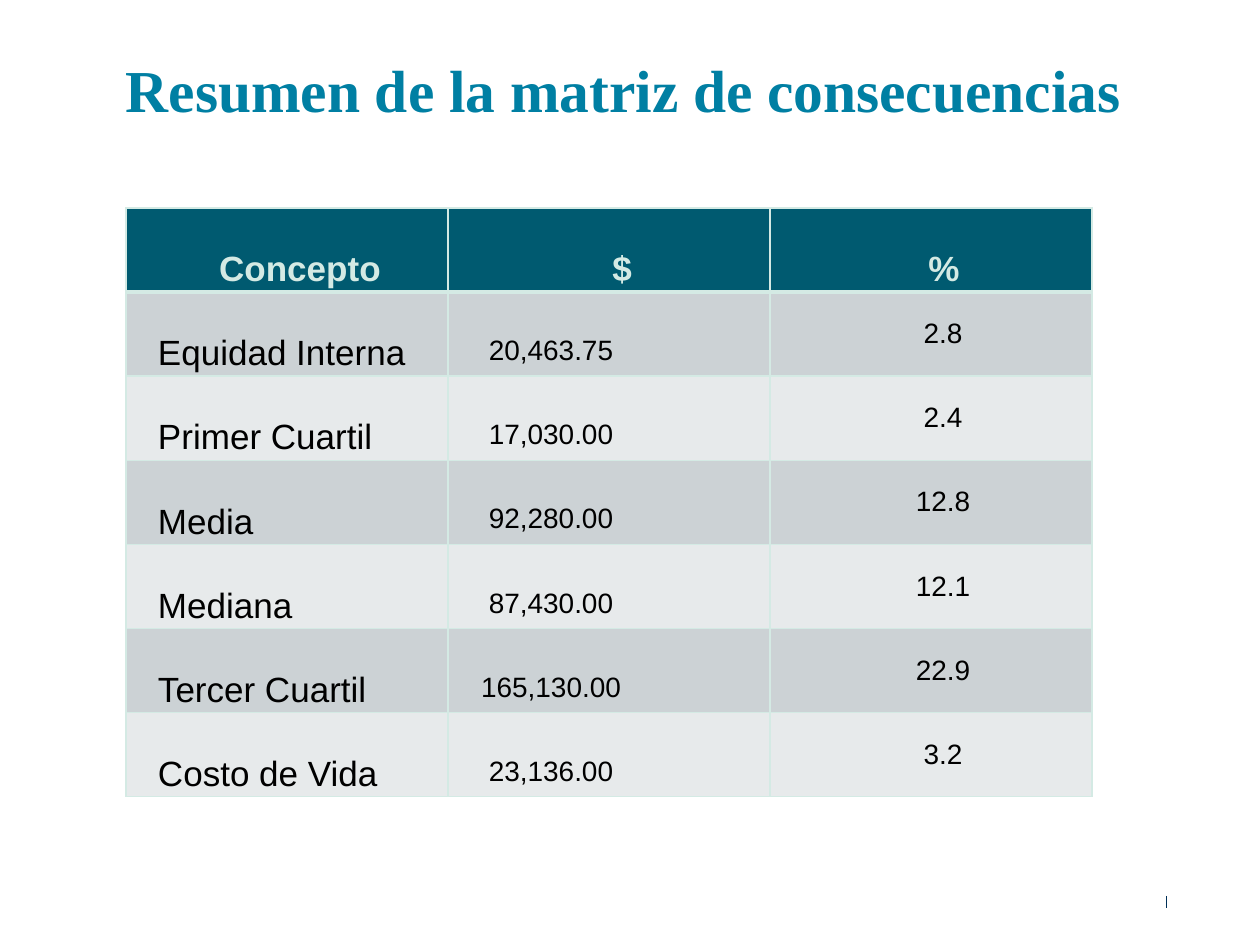
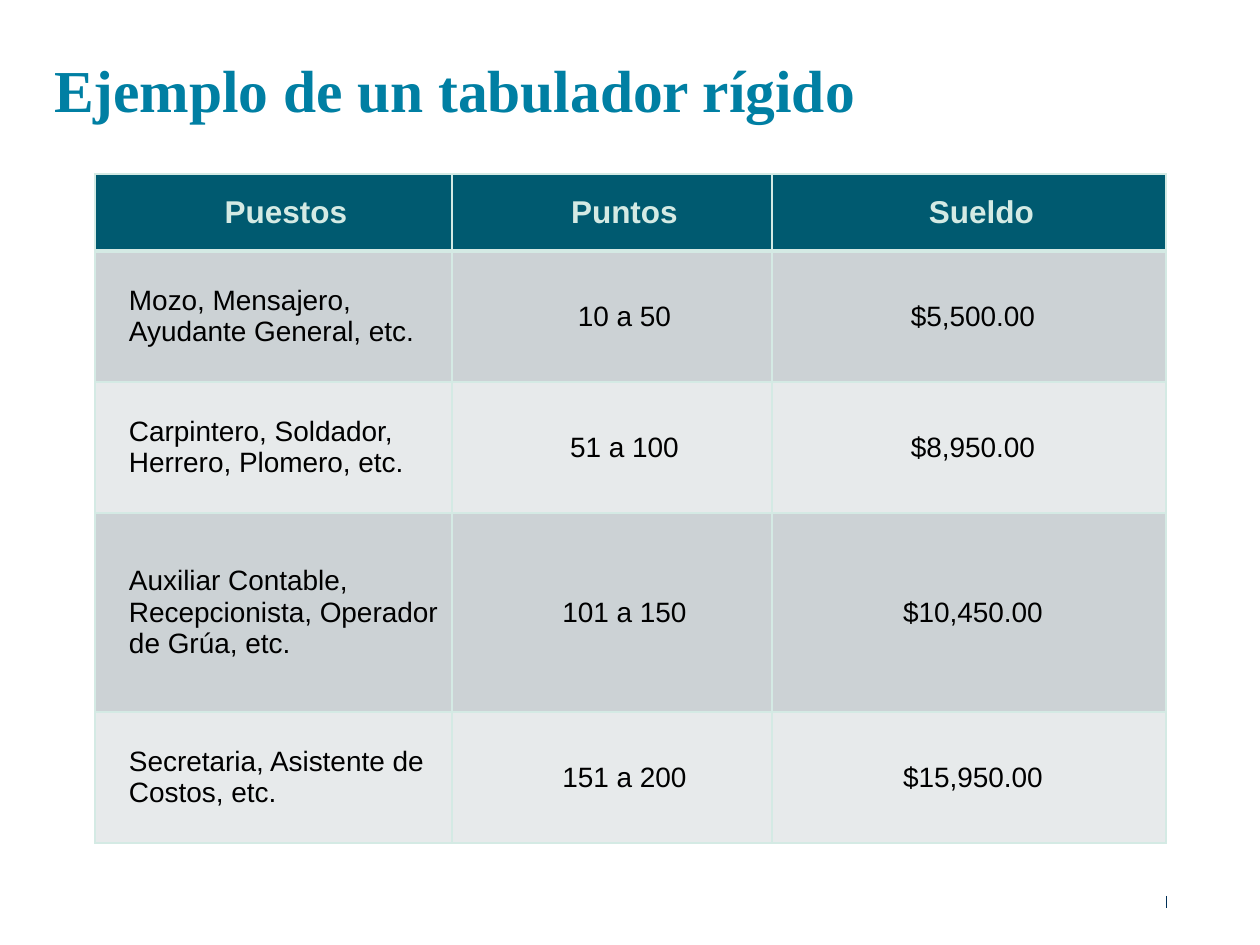
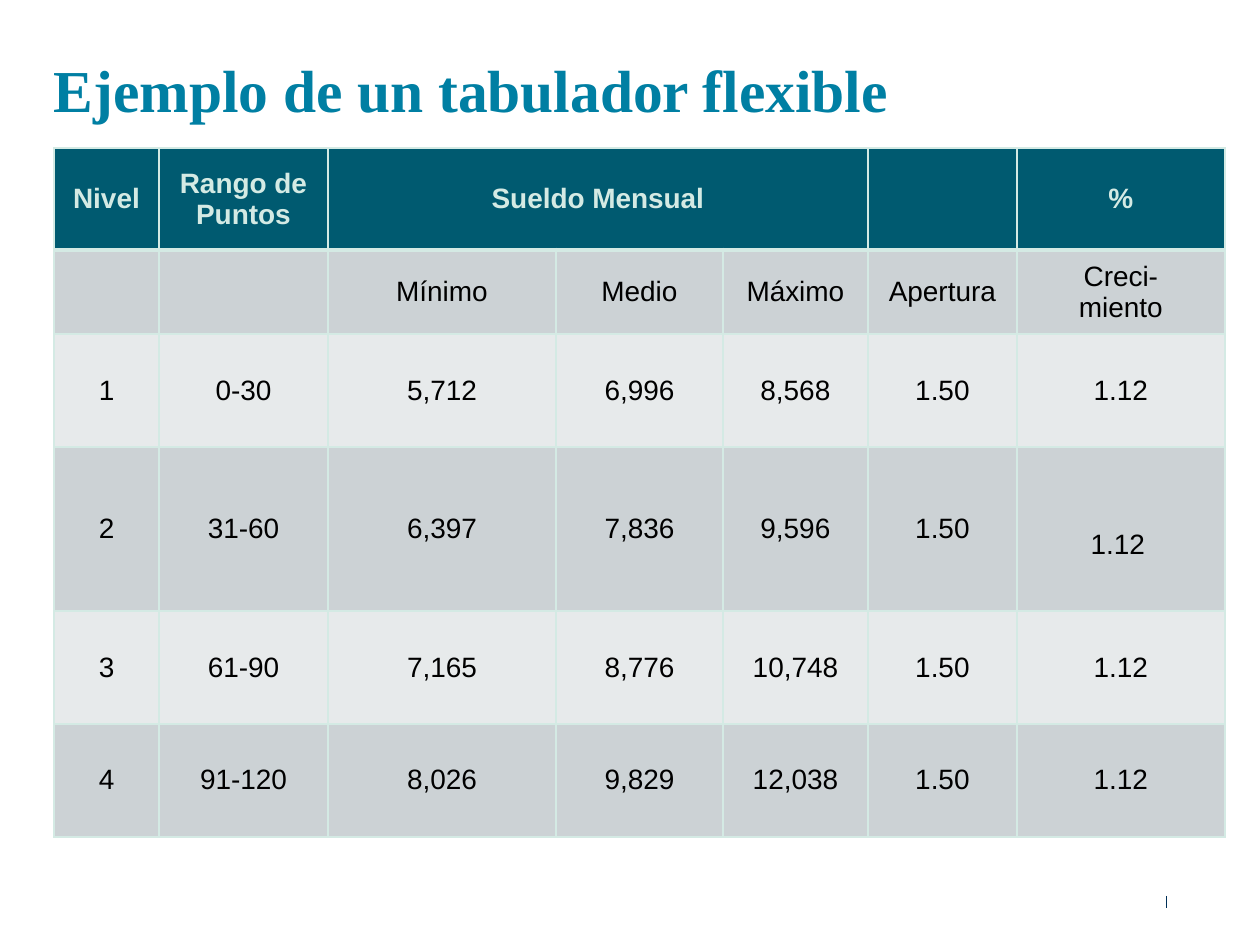
"""Builds three slides that show salary tables under a shared title style."""
from dataclasses import dataclass

from lxml import etree
from pptx import Presentation
from pptx.dml.color import RGBColor
from pptx.enum.shapes import MSO_CONNECTOR
from pptx.enum.text import MSO_ANCHOR, PP_ALIGN
from pptx.oxml.ns import qn
from pptx.util import Emu, Pt

STRAIGHT = MSO_CONNECTOR.STRAIGHT
TOP, MIDDLE = MSO_ANCHOR.TOP, MSO_ANCHOR.MIDDLE
LEFT, CENTER, JUSTIFY = PP_ALIGN.LEFT, PP_ALIGN.CENTER, PP_ALIGN.JUSTIFY
EMU_PER_PX = 914400 / 126


@dataclass(frozen=True)
class Theme:
    title: str = "007FA3"
    header: str = "005A70"
    header_text: str = "D4EAE4"
    border: str = "D4EAE4"
    bands: tuple = ("CCD2D5", "E7EAEB")
    body_text: str = "000000"
    mark: str = "003057"
    title_font: str = "Times New Roman"
    body_font: str = "Arial"
    title_size: int = 34
    title_leading: int = 40
    large: int = 20
    medium: int = 18
    normal: int = 16
    mark_width: float = 0.5
    border_width: int = 1
    header_rule: int = 3


@dataclass(frozen=True)
class CellStyle:
    size: int
    align: PP_ALIGN = CENTER
    left: int = 6
    top: int = 0
    right: int = 6
    spacing: float = 1.0


def px(length):
    return Emu(round(length * EMU_PER_PX))


class SlideBuilder:
    def __init__(self, theme):
        self.theme = theme
        self.deck = Presentation()
        self.deck.slide_width, self.deck.slide_height = px(1260), px(945)
        self.page = None

    def add_page(self, title, left, width, height=91):
        self.page = self.deck.slides.add_slide(self.deck.slide_layouts[6])
        self.footer_mark()
        self.title(title, left, width, height)

    def footer_mark(self):
        mark = self.page.shapes.add_connector(STRAIGHT, px(1166), px(896), px(1166), px(908))
        mark.line.color.rgb = RGBColor.from_string(self.theme.mark)
        mark.line.width = Pt(self.theme.mark_width)
        etree.SubElement(mark._element.spPr, qn("a:effectLst"))

    def title(self, text, left, width, height):
        box = self.page.shapes.add_textbox(px(left), px(54), px(width), px(height))
        frame = box.text_frame
        frame.word_wrap = True
        frame.vertical_anchor = TOP
        frame.margin_left = frame.margin_top = frame.margin_right = frame.margin_bottom = 0
        frame.text = text
        para = frame.paragraphs[0]
        para.line_spacing = Pt(self.theme.title_leading)
        self.format(para, self.theme.title_font, self.theme.title_size, self.theme.title, True)

    def format(self, para, name, size, color, bold):
        for span in para.runs:
            span.font.name = name
            span.font.size = Pt(size)
            span.font.bold = bold
            span.font.color.rgb = RGBColor.from_string(color)

    def table(self, left, top, widths, heights, rows, header, columns, special=None, merge=None):
        frame = self.page.shapes.add_table(
            len(heights), len(widths), px(left), px(top), px(sum(widths)), px(sum(heights)))
        table = frame.table
        for column, width in zip(table.columns, widths):
            column.width = px(width)
        for row, height in zip(table.rows, heights):
            row.height = px(height)
        if merge:
            table.cell(*merge[0]).merge(table.cell(*merge[1]))
        for r, values in enumerate(rows):
            for c, value in enumerate(values):
                style = (special or {}).get((r, c), columns[c] if r else header)
                self.cell(table.cell(r, c), r, value, style)

    def cell(self, cell, row, value, style):
        theme = self.theme
        is_header = row == 0
        self.borders(cell, row)
        cell.fill.solid()
        fill = theme.header if is_header else theme.bands[(row - 1) % 2]
        cell.fill.fore_color.rgb = RGBColor.from_string(fill)
        cell.vertical_anchor = MIDDLE
        cell.margin_left, cell.margin_right = px(style.left), px(style.right)
        cell.margin_top, cell.margin_bottom = px(style.top), 0
        if not value:
            return
        cell.text_frame.text = value
        color = theme.header_text if is_header else theme.body_text
        for para in cell.text_frame.paragraphs:
            para.alignment = style.align
            para.line_spacing = style.spacing
            self.format(para, theme.body_font, style.size, color, is_header)

    def borders(self, cell, row):
        thin, thick = self.theme.border_width, self.theme.header_rule
        sides = {"L": thin, "R": thin,
                 "T": thick if row == 1 else thin,
                 "B": thick if row == 0 else thin}
        properties = cell._tc.get_or_add_tcPr()
        for side, width in sides.items():
            line = etree.SubElement(properties, qn(f"a:ln{side}"), w=str(Pt(width)))
            fill = etree.SubElement(line, qn("a:solidFill"))
            etree.SubElement(fill, qn("a:srgbClr"), val=self.theme.border)


def consequences(builder):
    theme = builder.theme
    builder.add_page("Resumen de la matriz de consecuencias", 126, 1008)
    rows = [
        ("Concepto", "$", "%"),
        ("Equidad Interna", "20,463.75", "2.8"),
        ("Primer Cuartil", "17,030.00", "2.4"),
        ("Media", "92,280.00", "12.8"),
        ("Mediana", "87,430.00", "12.1"),
        ("Tercer Cuartil", "165,130.00", "22.9"),
        ("Costo de Vida", "23,136.00", "3.2"),
    ]
    header = CellStyle(theme.large, left=32, spacing=2.0)
    concept = CellStyle(theme.large, JUSTIFY, left=32, spacing=2.0)
    amount = CellStyle(theme.normal, left=0, top=34, right=116)
    percent = CellStyle(theme.normal, left=24, right=0)
    builder.table(126, 208, [322] * 3, [84] * len(rows), rows, header,
                  [concept, amount, percent])


def rigid_scale(builder):
    theme = builder.theme
    builder.add_page("Ejemplo de un tabulador rígido", 54, 1255)
    rows = [
        ("Puestos", "Puntos", "Sueldo"),
        ("Mozo, Mensajero, Ayudante General, etc.", "10 a 50", "$5,500.00"),
        ("Carpintero, Soldador, Herrero, Plomero, etc.", "51 a 100", "$8,950.00"),
        ("Auxiliar Contable, Recepcionista, Operador de Grúa, etc.", "101 a 150", "$10,450.00"),
        ("Secretaria, Asistente de Costos, etc.", "151 a 200", "$15,950.00"),
    ]
    header = CellStyle(theme.medium, left=34, right=9)
    jobs = CellStyle(theme.normal, LEFT, left=34, right=9)
    points = CellStyle(theme.normal, left=34, right=9)
    salary = CellStyle(theme.normal, left=8, right=0)
    builder.table(95, 174, [357, 320, 394], [77, 131, 131, 199, 131], rows, header,
                  [jobs, points, salary])


def flexible_scale(builder):
    builder.add_page("Ejemplo de un tabulador flexible", 54, 1157, 88)
    rows = [
        ("Nivel", "Rango de Puntos", "Sueldo Mensual", "", "", "", "%"),
        ("", "", "Mínimo", "Medio", "Máximo", "Apertura", "Creci-\nmiento"),
        ("1", "0-30", "5,712", "6,996", "8,568", "1.50", "1.12"),
        ("2", "31-60", "6,397", "7,836", "9,596", "1.50", "1.12"),
        ("3", "61-90", "7,165", "8,776", "10,748", "1.50", "1.12"),
        ("4", "91-120", "8,026", "9,829", "12,038", "1.50", "1.12"),
    ]
    plain = CellStyle(builder.theme.normal)
    lowered = CellStyle(builder.theme.normal, top=31, right=12)
    builder.table(54, 148, [105, 169, 228, 167, 145, 149, 208],
                  [102, 84, 113, 164, 113, 113], rows, plain, [plain] * 7,
                  special={(3, 6): lowered}, merge=((0, 2), (0, 4)))


def main():
    builder = SlideBuilder(Theme())
    consequences(builder)
    rigid_scale(builder)
    flexible_scale(builder)
    builder.deck.save("out.pptx")


if __name__ == "__main__":
    main()
